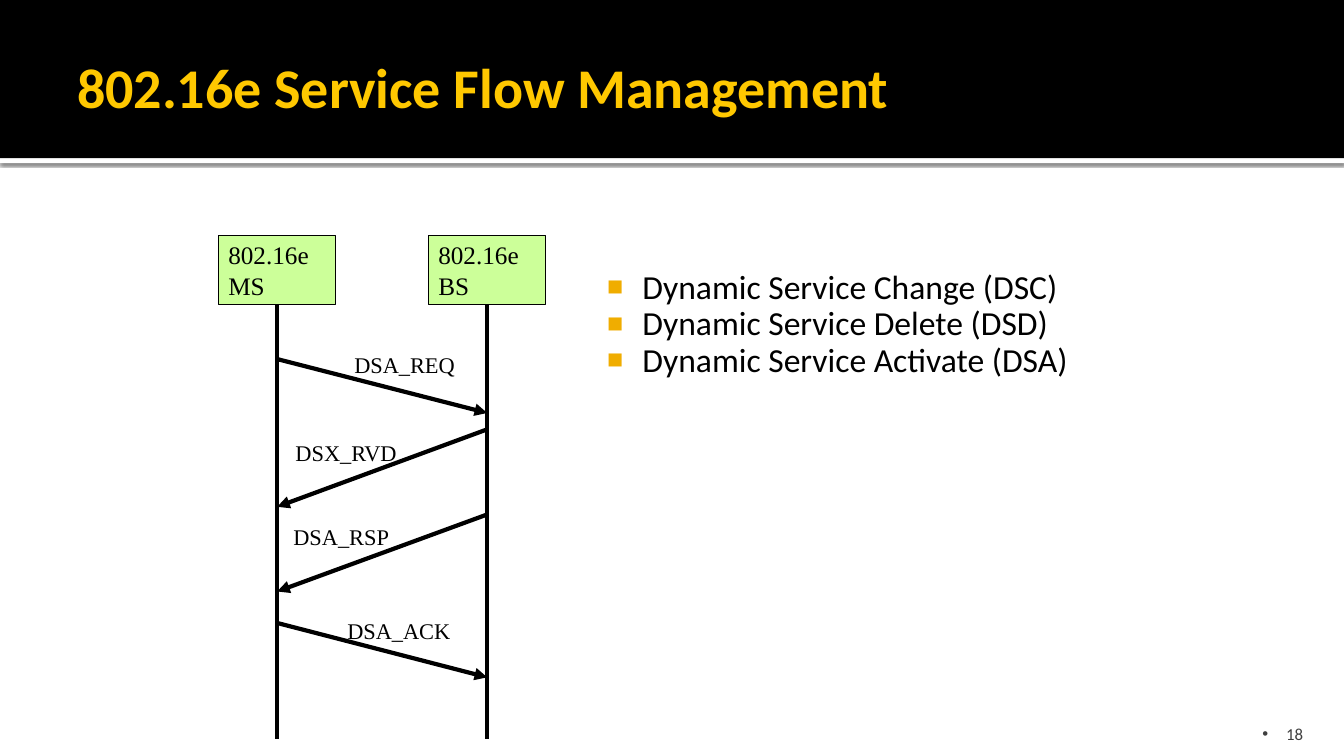
"""Draw the 802.16e service flow slide."""
from pptx import Presentation as Deck
from pptx.dml.color import RGBColor as Color
from pptx.enum.shapes import MSO_CONNECTOR as Link, MSO_SHAPE as Form
from pptx.enum.text import MSO_ANCHOR as Anchor, PP_ALIGN as Align
from pptx.oxml import parse_xml
from pptx.oxml.ns import nsdecls
from pptx.util import Pt

HUES = {"black": "000000", "white": "FFFFFF", "title": "FFC800",
        "green": "CCFF99", "gold": "F0AD00", "gray": "3F3F3F"}
SANS, SERIF = "Calibri", "Times New Roman"


def node(tag, attrs="", body=""):
    return parse_xml(f"<a:{tag} {nsdecls('a')} {attrs}>{body}</a:{tag}>")


def write(shape, text, size=16, font=SERIF, hue="black", bold=False, align=Align.LEFT,
          anchor=Anchor.TOP, pad=(7.2, 3.6, 7.2, 3.6), wrap=False, lead=None,
          gap=0, mark=None, tint=None, scale=100, hang=0, inset=0):
    frame = shape.text_frame
    frame.word_wrap = wrap
    frame.vertical_anchor = anchor
    (frame.margin_left, frame.margin_top,
     frame.margin_right, frame.margin_bottom) = map(Pt, pad)
    for i, line in enumerate(text.split("\n")):
        para = frame.add_paragraph() if i else frame.paragraphs[0]
        para.alignment = align
        para.space_before = para.space_after = Pt(gap)
        if lead:
            para.line_spacing = lead
        run = para.add_run()
        run.text = line
        run.font.size, run.font.name, run.font.bold = Pt(size), font, bold
        run.font.color.rgb = Color.from_string(HUES[hue])
        if mark:
            props = para._p.get_or_add_pPr()
            props.set("marL", str(Pt(inset)))
            props.set("indent", str(-Pt(hang)))
            fill = f'<a:srgbClr val="{HUES[tint or hue]}"/>'
            props.append(node("buClr", body=fill))
            props.append(node("buSzPct", f'val="{scale * 1000}"'))
            props.append(node("buFont", 'typeface="Arial"'))
            props.append(node("buChar", f'char="{mark}"'))


class Board:
    def __init__(self, slide, font=SERIF, width=3):
        self.slide, self.font, self.width = slide, font, width

    def box(self, x, y, w, h, fill, edge=None, shade=False):
        shape = self.slide.shapes.add_shape(Form.RECTANGLE, *map(Pt, (x, y, w, h)))
        shape.shadow.inherit = False
        shape.fill.solid()
        shape.fill.fore_color.rgb = Color.from_string(HUES[fill])
        if edge:
            shape.line.color.rgb = Color.from_string(HUES[edge])
            shape.line.width = Pt(0.75)
        else:
            shape.line.fill.background()
        if shade:
            cast = shape._element.spPr.find(node("effectLst").tag)
            cast.append(node(
                "outerShdw",
                f'blurRad="{Pt(2.5)}" dist="{Pt(0.8)}" dir="5400000" rotWithShape="0"',
                '<a:srgbClr val="000000"><a:alpha val="60000"/></a:srgbClr>'))
        return shape

    def label(self, x, y, w, h, text, **style):
        shape = self.slide.shapes.add_textbox(*map(Pt, (x, y, w, h)))
        write(shape, text, **{"font": self.font, **style})

    def line(self, x, y, x2, y2, start=None, head=False):
        link = self.slide.shapes.add_connector(
            Link.STRAIGHT, *map(Pt, (x, y, x2, y2)))
        link.line.color.rgb = Color.from_string(HUES["black"])
        link.line.width = Pt(self.width)
        if head:
            link.line._get_or_add_ln().append(node("tailEnd", 'type="triangle"'))
        link._element.spPr.append(node("effectLst"))
        if start:
            link.begin_connect(start, 2)


def main():
    deck = Deck()
    deck.slide_width, deck.slide_height = Pt(960), Pt(540)
    board = Board(deck.slides.add_slide(deck.slide_layouts[6]))

    board.box(0, 113, 960, 3.6, "white", shade=True)
    board.box(0, 0, 960, 113, "black")
    board.label(861, 510, 77, 21.6, "18", size=12, font=SANS, hue="gray",
                align=Align.RIGHT, anchor=Anchor.BOTTOM, pad=(7.2, 3.6, 7.2, 0),
                wrap=True, gap=10, mark="•", hang=17, inset=17)
    board.label(48, 12, 864, 99, "802.16e Service Flow Management", size=40,
                font=SANS, hue="title", bold=True, anchor=Anchor.MIDDLE,
                pad=(7.2, 3.6, 3.6, 3.6), wrap=True)
    board.label(420, 186, 388, 102,
                "Dynamic Service Change (DSC)\nDynamic Service Delete (DSD)\n"
                "Dynamic Service Activate (DSA)", size=24, font=SANS,
                pad=(4.3, 7.2, 7.2, 3.6), wrap=True, lead=0.9, mark="■",
                tint="gold", scale=80, hang=25.2, inset=34.6)

    wide, top, high = 84, 168, 49.7
    left, right = 198, 348
    for mid, name in ((left, "MS"), (right, "BS")):
        host = board.box(mid - wide / 2, top, wide, high, "green", "black")
        write(host, f"802.16e\n{name}", size=18, anchor=Anchor.MIDDLE)
        board.line(mid, top + high, mid, 528, start=host)

    calls = (("DSA_REQ", left, right, 256.5, 295, 246, 247),
             ("DSX_RVD", right, left, 306.7, 362, 204, 310),
             ("DSA_RSP", right, left, 367.5, 422.5, 202.5, 370),
             ("DSA_ACK", left, right, 445, 483.8, 241, 437))
    for name, start, end, y, y2, x, rise in calls:
        board.line(start, y, end, y2, head=True)
        board.label(x, rise, 92, 26.6, name)

    deck.save("out.pptx")


if __name__ == "__main__":
    main()
